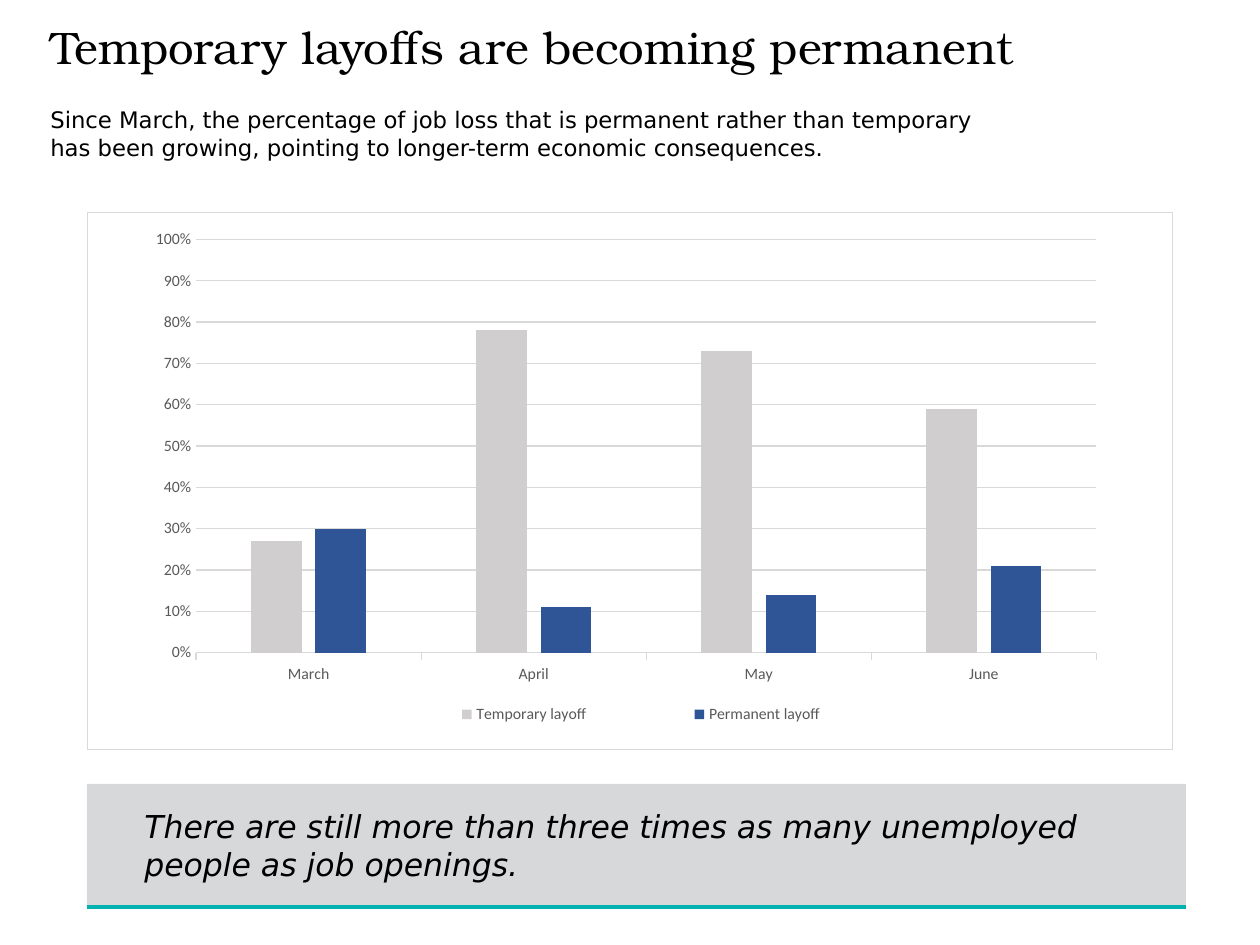
from dataclasses import dataclass

from lxml import etree
from pptx import Presentation
from pptx import util as u
from pptx.chart.data import CategoryChartData
from pptx.dml.color import RGBColor
from pptx.enum import chart as ch
from pptx.enum import shapes, text
from pptx.oxml import parse_xml
from pptx.oxml.ns import nsdecls, qn

DPI = 126
BLACK = RGBColor(0x00, 0x00, 0x00)
WHITE = RGBColor(0xFF, 0xFF, 0xFF)
PANEL = RGBColor(0xD6, 0xD8, 0xDA)
TEAL = RGBColor(0x00, 0xB1, 0xB0)
RULE = RGBColor(0xD9, 0xD9, 0xD9)
LABEL = RGBColor(0x59, 0x59, 0x59)
SILVER = RGBColor(0xD0, 0xCE, 0xCE)
BLUE = RGBColor(0x2F, 0x55, 0x97)
HEAD, BODY, DATA = "TeX Gyre Bonum", "DejaVu Sans", "Calibri"


@dataclass
class Box:
    x: int
    y: int
    w: int
    h: int

    def emu(self) -> list:
        return [px(n) for n in (self.x, self.y, self.w, self.h)]


@dataclass
class Series:
    name: str
    vals: tuple
    color: RGBColor


def px(n: int) -> int:
    return u.Inches(n / DPI)


def style(font, size: float, color: RGBColor, name: str) -> None:
    font.size, font.name = u.Pt(size), name
    font.color.rgb = color


def write(shape, words: str, *, size: float, name: str = BODY,
          italic: bool = False, before: int = 0, line: float = 1.0,
          anchor=text.MSO_ANCHOR.TOP) -> None:
    frame = shape.text_frame
    frame.word_wrap = True
    frame.auto_size = text.MSO_AUTO_SIZE.NONE
    frame.vertical_anchor = anchor
    par = frame.paragraphs[0]
    par.alignment = text.PP_ALIGN.LEFT
    par.space_before, par.line_spacing = u.Pt(before), line
    run = par.add_run()
    run.text = words
    style(run.font, size, BLACK, name)
    run.font.italic = italic


def place(node, index: int, inner: bool, **spots: float) -> None:
    """Give a chart part a manual layout, in fractions of the chart."""
    for old in node.findall(qn("c:layout")):
        node.remove(old)
    target = '<c:layoutTarget val="inner"/>' if inner else ""
    modes = '<c:xMode val="edge"/><c:yMode val="edge"/>'
    sizes = "".join(f'<c:{k} val="{v}"/>' for k, v in spots.items())
    node.insert(index, parse_xml(
        f'<c:layout {nsdecls("c")}><c:manualLayout>{target}{modes}{sizes}'
        "</c:manualLayout></c:layout>"))


def frame_chart(chart) -> None:
    """Fill and outline the whole chart area."""
    chart.element.find(qn("c:chart")).addnext(parse_xml(
        f'<c:spPr {nsdecls("c", "a")}>'
        f'<a:solidFill><a:srgbClr val="{WHITE}"/></a:solidFill>'
        f'<a:ln w="{u.Pt(0.75)}"><a:solidFill><a:srgbClr val="{RULE}"/>'
        "</a:solidFill></a:ln></c:spPr>")) if hasattr(chart, "element") else \
        chart._chartSpace.find(qn("c:chart")).addnext(parse_xml(
            f'<c:spPr {nsdecls("c", "a")}/>'))


def rule(line, color: RGBColor, width: float) -> None:
    line.color.rgb = color
    line.width = u.Pt(width)


def draw_chart(slide, box: Box, cats: tuple, rows: list) -> None:
    data = CategoryChartData(number_format="0%")
    data.categories = cats
    for row in rows:
        data.add_series(row.name, row.vals)
    chart = slide.shapes.add_chart(
        ch.XL_CHART_TYPE.COLUMN_CLUSTERED, *box.emu(), data).chart
    style(chart.font, 10, BLACK, DATA)
    chart.has_title = False
    frame_chart(chart)

    # Columns
    plot = chart.plots[0]
    plot.gap_width, plot.overlap = 219, -27
    plot.vary_by_categories = False
    for bar, row in zip(plot.series, rows):
        bar.format.fill.solid()
        bar.format.fill.fore_color.rgb = row.color

    # Axes
    cat, val = chart.category_axis, chart.value_axis
    for axis in (cat, val):
        style(axis.tick_labels.font, 9, LABEL, DATA)
    cat.major_tick_mark = ch.XL_TICK_MARK.OUTSIDE
    rule(cat.format.line, RULE, 0.75)
    val.major_tick_mark = ch.XL_TICK_MARK.NONE
    val.minimum_scale, val.maximum_scale, val.major_unit = 0, 1, 0.1
    val.tick_labels.number_format = "0%"
    val.tick_labels.number_format_is_linked = False
    val.format.line.fill.background()
    rule(val.major_gridlines.format.line, RULE, 0.75)

    # Legend and plot positions
    chart.has_legend = True
    key = chart.legend
    key.position = ch.XL_LEGEND_POSITION.BOTTOM
    key.include_in_layout = False
    style(key.font, 9, LABEL, DATA)
    area = chart._chartSpace.find(".//" + qn("c:plotArea"))
    place(area, 0, True, x=0.1, y=0.05, w=0.83, h=0.77)
    place(area.getparent().find(qn("c:legend")), 1, False,
          x=0.25, y=0.9, w=0.52, h=0.07)


def draw_panel(slide, box: Box) -> None:
    panel = slide.shapes.add_shape(
        shapes.MSO_SHAPE.RECTANGLE, *box.emu())
    panel.shadow.inherit = False
    panel.fill.solid()
    panel.fill.fore_color.rgb = PANEL
    panel.line.fill.background()
    base = px(box.y + box.h)
    edge = slide.shapes.add_connector(
        shapes.MSO_CONNECTOR.STRAIGHT, px(box.x), base, px(box.x + box.w), base)
    rule(edge.line, TEAL, 2.25)
    etree.SubElement(edge._element.spPr, qn("a:effectLst"))


def main() -> None:
    deck = Presentation()
    deck.slide_width, deck.slide_height = u.Inches(10), u.Inches(7.5)
    slide = deck.slides.add_slide(deck.slide_layouts[5])

    # Title and summary
    title = slide.shapes.title
    title.left, title.top, title.width, title.height = Box(38, 0, 1086, 100).emu()
    write(title, "Temporary layoffs are becoming permanent", size=26,
          name=HEAD, line=0.9, anchor=text.MSO_ANCHOR.MIDDLE)
    write(slide.shapes.add_textbox(*Box(38, 100, 975, 68).emu()),
          "Since March, the percentage of job loss that is permanent rather "
          "than temporary has been growing, pointing to longer-term economic "
          "consequences.", size=13)

    # Callout
    draw_panel(slide, Box(87, 784, 1099, 123))
    write(slide.shapes.add_textbox(*Box(132, 801, 993, 90).emu()),
          "There are still more than three times as many unemployed people "
          "as job openings.", size=18, italic=True, before=6)

    # Chart
    draw_chart(slide, Box(87, 212, 1086, 538),
               ("March", "April", "May", "June"),
               [Series("Temporary layoff", (0.27, 0.78, 0.73, 0.59), SILVER),
                Series("Permanent layoff", (0.3, 0.11, 0.14, 0.21), BLUE)])
    deck.save("out.pptx")


if __name__ == "__main__":
    main()
